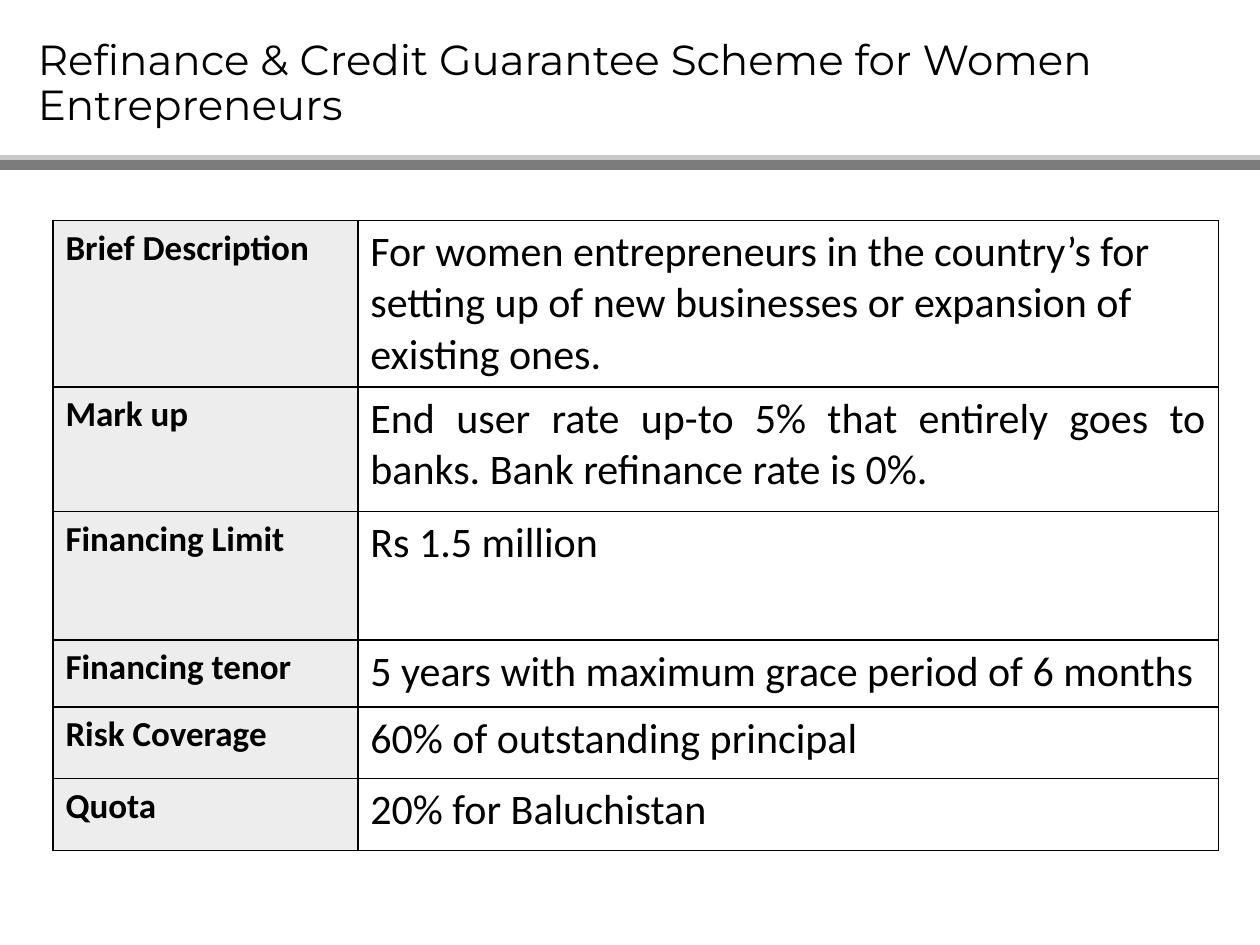
from dataclasses import dataclass

import lxml.etree
import pptx
import pptx.dml.color
import pptx.enum.shapes
import pptx.enum.text
import pptx.oxml
import pptx.oxml.ns
import pptx.util
from pptx.util import Inches


@dataclass(frozen=True)
class Theme:
    text: str = "000000"
    border: str = "000000"
    label_fill: str = "EDEDED"
    light_rule: str = "C9C9C9"
    dark_rule: str = "7C7C7C"
    title_font: str = "Montserrat"
    body_font: str = "Calibri"
    title_size: int = 24
    label_size: int = 20
    value_size: int = 24
    rule_width: int = 6
    border_width: int = 1


THEME = Theme()
TITLE = "Refinance & Credit Guarantee Scheme for Women Entrepreneurs"
LEFT = pptx.enum.text.PP_ALIGN.LEFT
JUSTIFY = pptx.enum.text.PP_ALIGN.JUSTIFY
SCHEME_ROWS = [
    ("Brief Description",
     "For women entrepreneurs in the country’s for setting up of new "
     "businesses or expansion of existing ones.", LEFT, 1.19),
    ("Mark up",
     "End user rate up-to 5% that entirely goes to banks. "
     "Bank refinance rate is 0%.", JUSTIFY, 0.99),
    ("Financing Limit", "Rs 1.5 million", JUSTIFY, 1.02),
    ("Financing tenor", "5 years with maximum grace period of 6 months", JUSTIFY, 0.53),
    ("Risk Coverage", "60% of outstanding principal", JUSTIFY, 0.57),
    ("Quota", "20% for Baluchistan", JUSTIFY, 0.57),
]


def color(value):
    return pptx.dml.color.RGBColor.from_string(value)


def add_run(paragraph, text, font_name, size, bold=False):
    run = paragraph.add_run()
    run.text = text
    run.font.name = font_name
    run.font.size = pptx.util.Pt(size)
    run.font.bold = bold
    run.font.color.rgb = color(THEME.text)


def add_title(slide, left, top, width, height):
    title = slide.shapes.title
    title.left, title.top, title.width, title.height = left, top, width, height
    frame = title.text_frame
    frame.word_wrap = True
    frame.auto_size = pptx.enum.text.MSO_AUTO_SIZE.NONE
    frame.vertical_anchor = pptx.enum.text.MSO_ANCHOR.MIDDLE
    paragraph = frame.paragraphs[0]
    paragraph.alignment = LEFT
    paragraph.line_spacing = 0.9
    add_run(paragraph, TITLE, THEME.title_font, THEME.title_size)


def add_header_rules(slide, left, top, width, gap):
    for index, rule_color in enumerate((THEME.light_rule, THEME.dark_rule)):
        y = top + index * gap
        rule = slide.shapes.add_connector(
            pptx.enum.shapes.MSO_CONNECTOR.STRAIGHT, left, y, left + width, y)
        rule.line.color.rgb = color(rule_color)
        rule.line.width = pptx.util.Pt(THEME.rule_width)
        lxml.etree.SubElement(
            rule._element.spPr, pptx.oxml.ns.qn("a:effectLst"))


def set_borders(cell):
    properties = cell._tc.get_or_add_tcPr()
    for index, side in enumerate(("lnL", "lnR", "lnT", "lnB")):
        border = pptx.oxml.parse_xml(
            f'<a:{side} {pptx.oxml.ns.nsdecls("a")} '
            f'w="{pptx.util.Pt(THEME.border_width)}"><a:solidFill>'
            f'<a:srgbClr val="{THEME.border}"/></a:solidFill></a:{side}>')
        properties.insert(index, border)


def format_cell(cell, text, size, alignment=LEFT, bold=False, fill=None):
    if fill:
        cell.fill.solid()
        cell.fill.fore_color.rgb = color(fill)
    else:
        cell.fill.background()
    set_borders(cell)
    paragraph = cell.text_frame.paragraphs[0]
    paragraph.alignment = alignment
    add_run(paragraph, text, THEME.body_font, size, bold)


def add_scheme_table(slide, left, top, width, height):
    table = slide.shapes.add_table(
        len(SCHEME_ROWS), 2, left, top, width, height).table
    table.first_row = False
    table.horz_banding = False
    label_width = Inches(2.42)
    table.columns[0].width = label_width
    table.columns[1].width = width - label_width
    for index, (label, value, alignment, row_height) in enumerate(SCHEME_ROWS):
        table.rows[index].height = Inches(row_height)
        format_cell(table.cell(index, 0), label, THEME.label_size,
                    bold=True, fill=THEME.label_fill)
        format_cell(table.cell(index, 1), value, THEME.value_size, alignment)


def main():
    presentation = pptx.Presentation()
    presentation.slide_width = Inches(10)
    presentation.slide_height = Inches(7.5)
    slide = presentation.slides.add_slide(
        presentation.slide_layouts.get_by_name("Title Only"))
    add_header_rules(slide, Inches(0), Inches(1.27),
                     presentation.slide_width, Inches(0.04))
    add_title(slide, Inches(0.2), Inches(0.17), Inches(8.8), Inches(1))
    add_scheme_table(slide, Inches(0.42), Inches(1.75), Inches(9.25),
                     Inches(sum(row[-1] for row in SCHEME_ROWS)))
    presentation.save("out.pptx")


if __name__ == "__main__":
    main()
